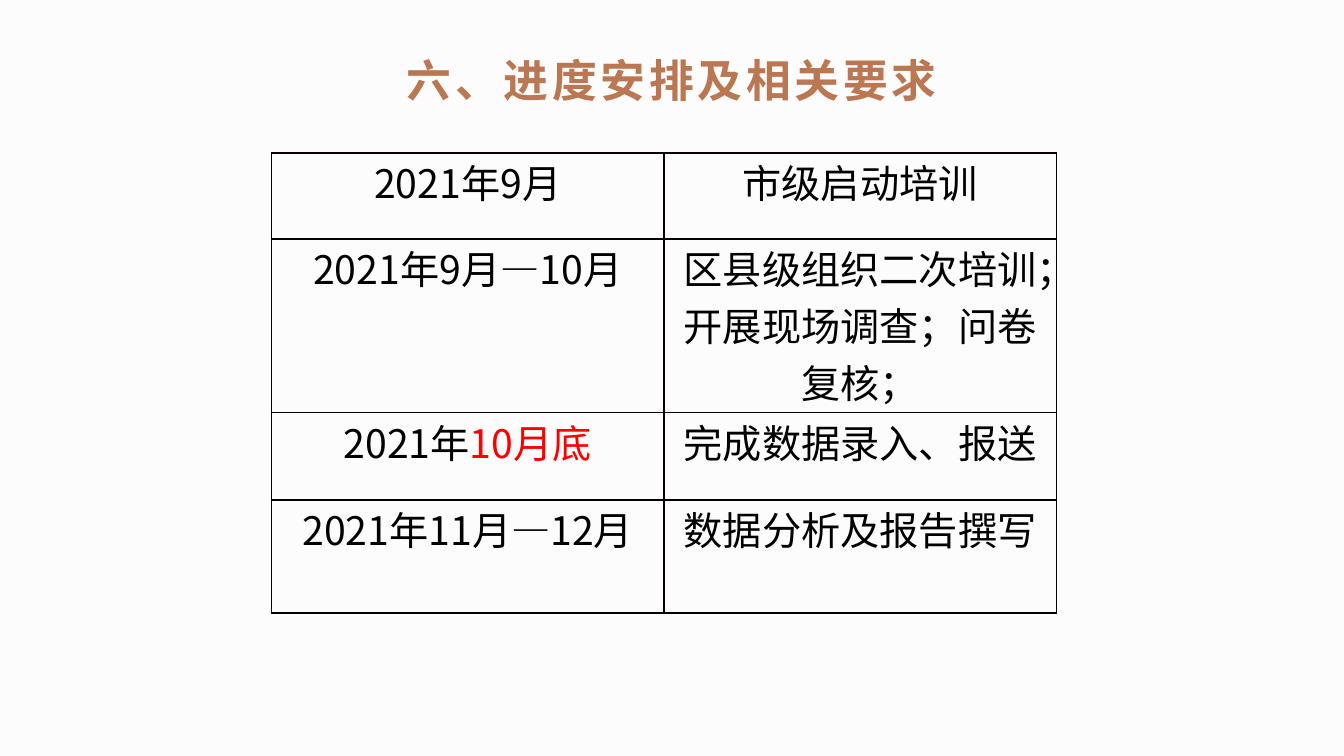
from pptx import Presentation, util as u
from pptx.dml.color import RGBColor
from pptx.enum import text
from pptx.oxml.ns import qn
from lxml import etree

WIDTH = 10
HEIGHT = WIDTH * 9 / 16
FONT = "Noto Sans CJK SC"
BACKGROUND, BROWN, BLACK, RED, BORDER = "FDFCFC", "BA7751", "000000", "FF0000", "080000"

# Each cell is a list of (wording, colour) runs; no colour means black
SCHEDULE = [
    ([("2021年9月", None)], [("市级启动培训", None)]),
    ([("2021年9月—10月", None)], [("区县级组织二次培训；开展现场调查；问卷复核；", None)]),
    ([("2021年", None), ("10月底", RED)], [("完成数据录入、报送", None)]),
    ([("2021年11月—12月", None)], [("数据分析及报告撰写", None)]),
]
ROW_HEIGHTS = [0.64, 1.29, 0.65, 0.84]
COLUMN_WIDTH = 2.92


def color(hex_string):
    return RGBColor.from_string(hex_string)


def write_paragraph(paragraph, runs, size, hex_string, bold=False, spacing=0):
    """Fill one centred paragraph and style it as a whole."""
    paragraph.alignment = text.PP_ALIGN.CENTER
    font = paragraph.font
    font.name, font.size, font.bold = FONT, u.Pt(size), bold
    font.color.rgb = color(hex_string)
    # East Asian font and letter spacing
    properties = paragraph._p.pPr.find(qn("a:defRPr"))
    properties.set("spc", str(spacing * 100))
    etree.SubElement(properties, qn("a:ea"), typeface=FONT)
    for wording, run_color in runs:
        run = paragraph.add_run()
        run.text = wording
        if run_color:
            run.font.color.rgb = color(run_color)


def add_title(slide, wording):
    width = WIDTH * 0.668
    box = slide.shapes.add_textbox(u.Inches((WIDTH - width) / 2), u.Inches(0.36),
                                   u.Inches(width), u.Inches(0.36))
    frame = box.text_frame
    frame.word_wrap = True
    frame.vertical_anchor = text.MSO_ANCHOR.MIDDLE
    frame.margin_left = frame.margin_right = u.Inches(0.07)
    frame.margin_top, frame.margin_bottom = u.Inches(0.11), 0
    write_paragraph(frame.paragraphs[0], [(wording, None)], 24, BROWN, True, 2)


def add_borders(cell, hex_string, points):
    properties = cell._tc.get_or_add_tcPr()
    for index, side in enumerate(("lnL", "lnR", "lnT", "lnB")):
        line = etree.Element(qn(f"a:{side}"), w=str(u.Pt(points)))
        fill = etree.SubElement(line, qn("a:solidFill"))
        etree.SubElement(fill, qn("a:srgbClr"), val=hex_string)
        properties.insert(index, line)


def fill_cell(cell, runs):
    cell.fill.background()
    cell.margin_left = cell.margin_right = u.Inches(0.06)
    cell.margin_top = cell.margin_bottom = 0
    add_borders(cell, BORDER, 1)
    write_paragraph(cell.text_frame.paragraphs[0], runs, 21, BLACK)


def add_schedule(slide, left, top):
    columns = len(SCHEDULE[0])
    frame = slide.shapes.add_table(len(SCHEDULE), columns, u.Inches(left), u.Inches(top),
                                   u.Inches(columns * COLUMN_WIDTH),
                                   u.Inches(sum(ROW_HEIGHTS)))
    table = frame.table
    table.first_row = table.horz_banding = False
    for column in table.columns:
        column.width = u.Inches(COLUMN_WIDTH)
    for row, height, contents in zip(table.rows, ROW_HEIGHTS, SCHEDULE):
        row.height = u.Inches(height)
        for cell, runs in zip(row.cells, contents):
            fill_cell(cell, runs)


def main():
    presentation = Presentation()
    presentation.slide_width = u.Inches(WIDTH)
    presentation.slide_height = u.Inches(HEIGHT)
    slide = presentation.slides.add_slide(presentation.slide_layouts[6])

    # Background
    slide.background.fill.solid()
    slide.background.fill.fore_color.rgb = color(BACKGROUND)

    # Heading and timetable
    add_title(slide, "六、进度安排及相关要求")
    add_schedule(slide, left=2.02, top=1.14)

    presentation.save("out.pptx")


if __name__ == "__main__":
    main()
